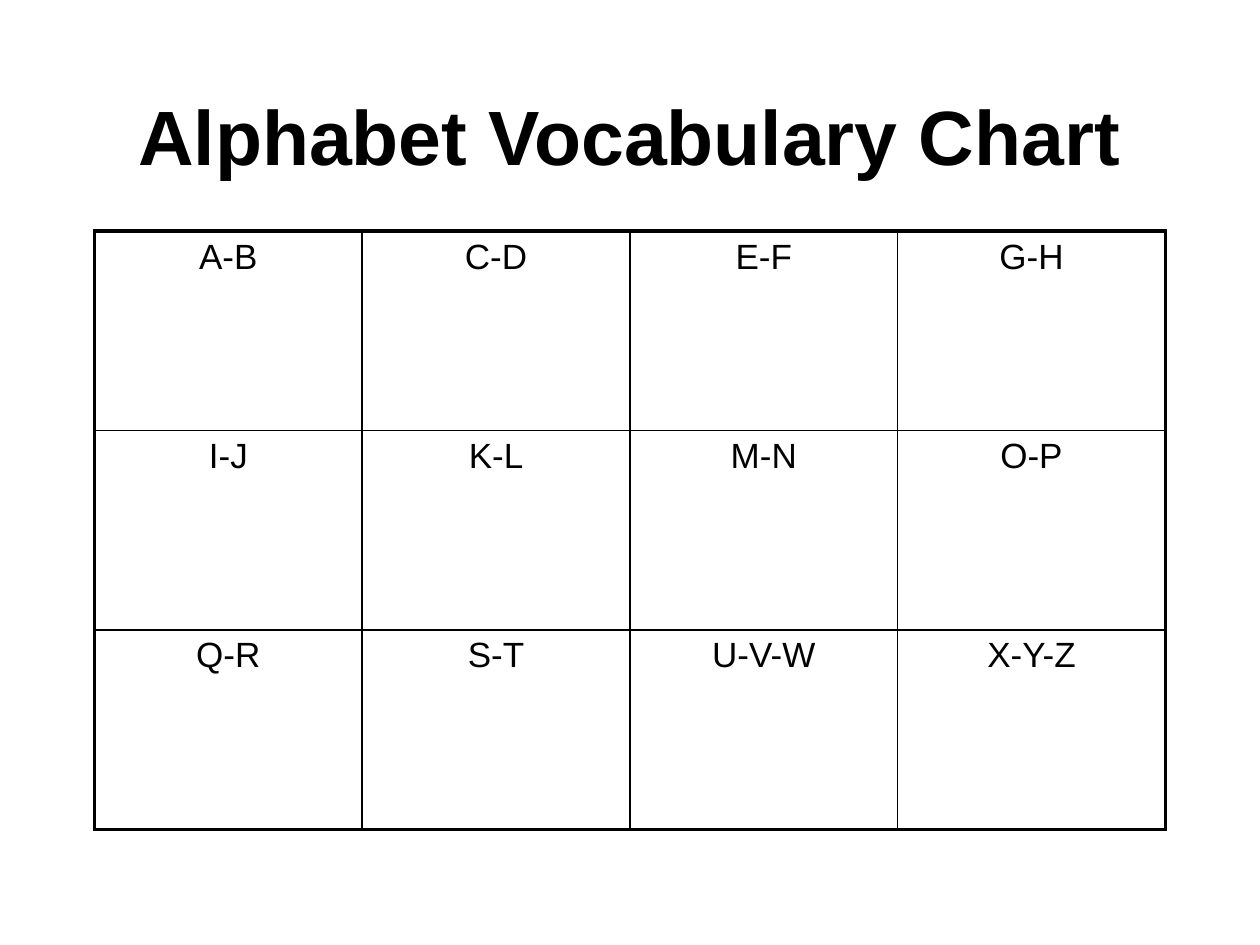
from dataclasses import dataclass

from lxml.etree import SubElement
from pptx import Presentation
from pptx.dml.color import RGBColor
from pptx.enum.text import MSO_ANCHOR as Anchor, PP_ALIGN as Align
from pptx.oxml.ns import qn
from pptx.util import Pt


@dataclass(frozen=True)
class Theme:
    font: str = "Arial"
    ink: str = "000000"
    paper: str = "FFFFFF"
    title: float = 44
    body: float = 20
    thin: float = 1
    thick: float = 2.25


THEME = Theme()
LETTERS = [
    ["A-B", "C-D", "E-F", "G-H"],
    ["I-J", "K-L", "M-N", "O-P"],
    ["Q-R", "S-T", "U-V-W", "X-Y-Z"],
]


def write(frame, text, size=THEME.body, bold=False, align=Align.CENTER):
    frame.word_wrap = True
    para = frame.paragraphs[0]
    para.alignment = align
    run = para.add_run()
    run.text = text
    font = run.font
    font.name, font.size, font.bold = THEME.font, Pt(size), bold
    font.color.rgb = RGBColor.from_string(THEME.ink)


def add_title(slide, text, left, top, width, height):
    title = slide.shapes.title
    title.left, title.top = Pt(left), Pt(top)
    title.width, title.height = Pt(width), Pt(height)
    title.text_frame.vertical_anchor = Anchor.MIDDLE
    write(title.text_frame, text, size=THEME.title, bold=True)


def set_edges(cell, **edges):
    """Draw each named edge (L, R, T, B); a true value makes it thick."""
    props = cell._tc.get_or_add_tcPr()
    for side, outer in edges.items():
        width = THEME.thick if outer else THEME.thin
        line = SubElement(props, qn(f"a:ln{side}"), w=str(Pt(width)))
        fill = SubElement(line, qn("a:solidFill"))
        SubElement(fill, qn("a:srgbClr"), val=THEME.ink)


def add_grid(slide, rows, left, top, width, height):
    high, wide = len(rows), len(rows[0])
    table = slide.shapes.add_table(
        high, wide, Pt(left), Pt(top), Pt(width), Pt(height)
    ).table
    table.first_row = table.horz_banding = False
    for r, row in enumerate(rows):
        for c, text in enumerate(row):
            cell = table.cell(r, c)
            set_edges(cell, L=c == 0, R=c == wide - 1, T=r == 0, B=r == high - 1)
            cell.fill.background()
            cell.vertical_anchor = Anchor.TOP
            write(cell.text_frame, text)


def main():
    deck = Presentation()
    deck.slide_width, deck.slide_height = Pt(720), Pt(540)
    slide = deck.slides.add_slide(deck.slide_layouts[5])
    back = slide.background.fill
    back.solid()
    back.fore_color.rgb = RGBColor.from_string(THEME.paper)
    add_title(slide, "Alphabet Vocabulary Chart", 54, 48, 612, 58.5)
    add_grid(slide, LETTERS, 54, 132, 612, 342)
    deck.save("out.pptx")


if __name__ == "__main__":
    main()
